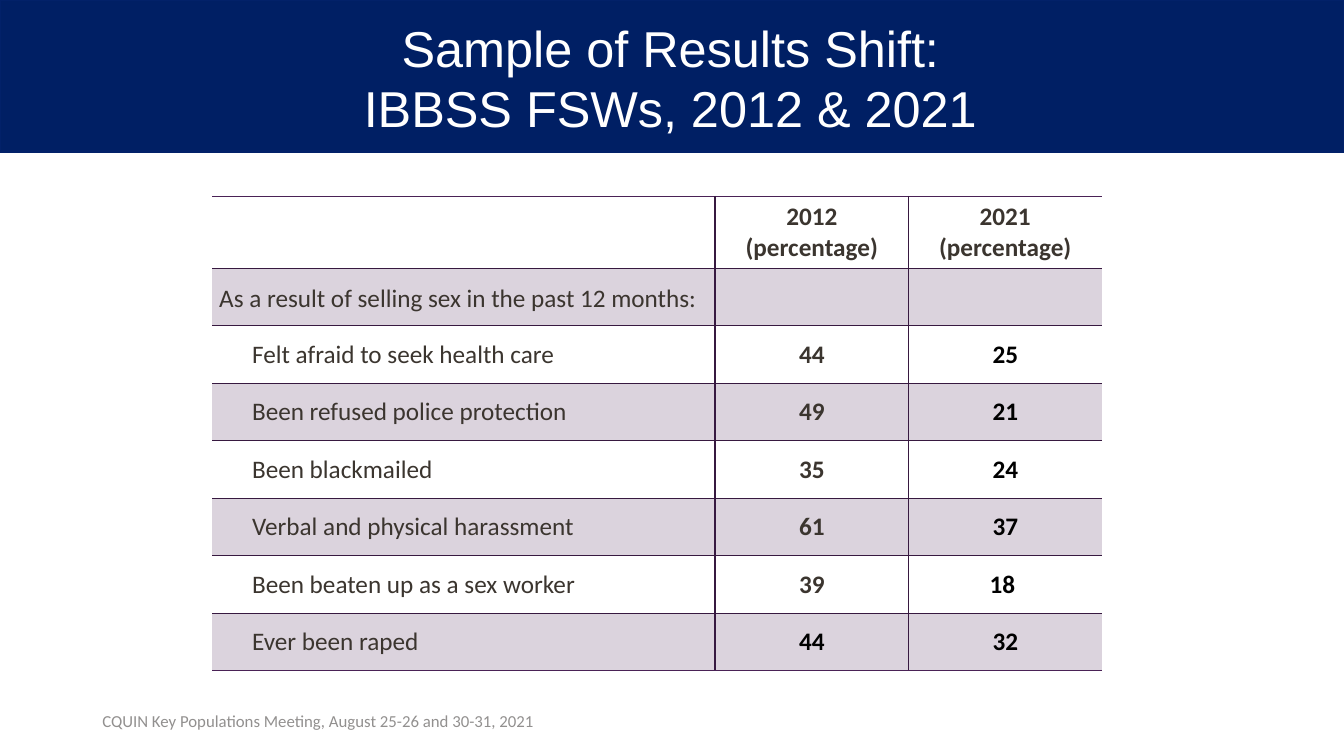
from lxml.etree import SubElement
from pptx import Presentation
from pptx.dml.color import RGBColor
from pptx.enum.shapes import MSO_SHAPE
from pptx.enum.text import MSO_ANCHOR, PP_ALIGN
from pptx.oxml.ns import qn
from pptx.util import Pt

TEXT, BLACK, BORDER, STRIPE = "3B352F", "000000", "371940", "DBD3DD"
ROWS = [
    ("", "2012\n(percentage)", "2021\n(percentage)"),
    ("As a result of selling sex in the past 12 months:", "", ""),
    ("Felt afraid to seek health care", "44", "25"),
    ("Been refused police protection", "49", "21"),
    ("Been blackmailed", "35", "24"),
    ("Verbal and physical harassment", "61", "37"),
    ("Been beaten up as a sex worker", "39", "18 "),
    ("Ever been raped", "44", "32"),
]


def style(paragraph, name, size, color, bold=False):
    font = paragraph.font
    font.name, font.size, font.bold = name, Pt(size), bold
    font.color.rgb = RGBColor.from_string(color)


def set_borders(cell, sides):
    """Draw a 1 pt line on each side mapped to a colour; None means no line."""
    properties = cell._tc.get_or_add_tcPr()
    for position, (side, color) in enumerate(sides.items()):
        line = SubElement(properties, qn(f"a:ln{side}"), w=str(Pt(1)))
        properties.insert(position, line)
        if color:
            fill = SubElement(line, qn("a:solidFill"))
            SubElement(fill, qn("a:srgbClr"), val=color)
        else:
            SubElement(line, qn("a:noFill"))


deck = Presentation()
deck.slide_width, deck.slide_height = Pt(960), Pt(540)
page = deck.slides.add_slide(deck.slide_layouts[6])

# Title band
band = page.shapes.add_shape(MSO_SHAPE.RECTANGLE, 0, 0, Pt(960), Pt(108))
band.shadow.inherit = False
band.fill.solid()
band.fill.fore_color.rgb = RGBColor.from_string("001F64")
band.line.color.rgb = RGBColor.from_string("022169")
band.line.width = Pt(2)

# Title and footer
for text, left, top, width, height, name, size, color, align in [
    ("Sample of Results Shift:\vIBBSS FSWs, 2012 & 2021",
     65, 25.2, 828, 60, "Arial", 36, "FFFFFF", PP_ALIGN.CENTER),
    ("CQUIN Key Populations Meeting, August 25-26 and 30-31, 2021",
     66, 500.4, 375, 29, "Calibri", 12, "92908F", PP_ALIGN.LEFT),
]:
    box = page.shapes.add_textbox(Pt(left), Pt(top), Pt(width), Pt(height))
    frame = box.text_frame
    frame.word_wrap = True
    frame.vertical_anchor = MSO_ANCHOR.MIDDLE
    frame.text = text
    para = frame.paragraphs[0]
    para.alignment = align
    style(para, name, size, color)

# Results table
frame = page.shapes.add_table(len(ROWS), 3, Pt(151.6), Pt(140.4), Pt(635.6), Pt(338.9))
table = frame.table
table.first_row = table.horz_banding = False
for column, width in zip(table.columns, (359.2, 138.2, 138.2)):
    column.width = Pt(width)
for row, height in zip(table.rows, [51.2] + [41.1] * 7):
    row.height = Pt(height)

last = len(ROWS) - 1
for r, texts in enumerate(ROWS):
    for c, text in enumerate(texts):
        cell = table.cell(r, c)
        cell.text = text
        if r % 2:
            cell.fill.solid()
            cell.fill.fore_color.rgb = RGBColor.from_string(STRIPE)
        else:
            cell.fill.background()
        if r:
            cell.vertical_anchor = MSO_ANCHOR.MIDDLE
            cell.margin_top = cell.margin_bottom = cell.margin_right = 0
            cell.margin_left = Pt(0 if c else 5 if r == 1 else 28.5)
        black = r > 1 and (c == 2 or (c == 1 and r == last))
        for para in cell.text_frame.paragraphs:
            para.alignment = PP_ALIGN.CENTER if c else PP_ALIGN.LEFT
            style(para, "Calibri", 18, BLACK if black else TEXT, bold=c > 0)
        set_borders(cell, {
            "L": BORDER if c else None,
            "R": BORDER if c < 2 else None,
            "T": BORDER if r else "4A2256",
            "B": BORDER if r < last else "4A2256",
        })
table.cell(1, 0).text_frame.paragraphs[0].line_spacing = 1.15

deck.save("out.pptx")
